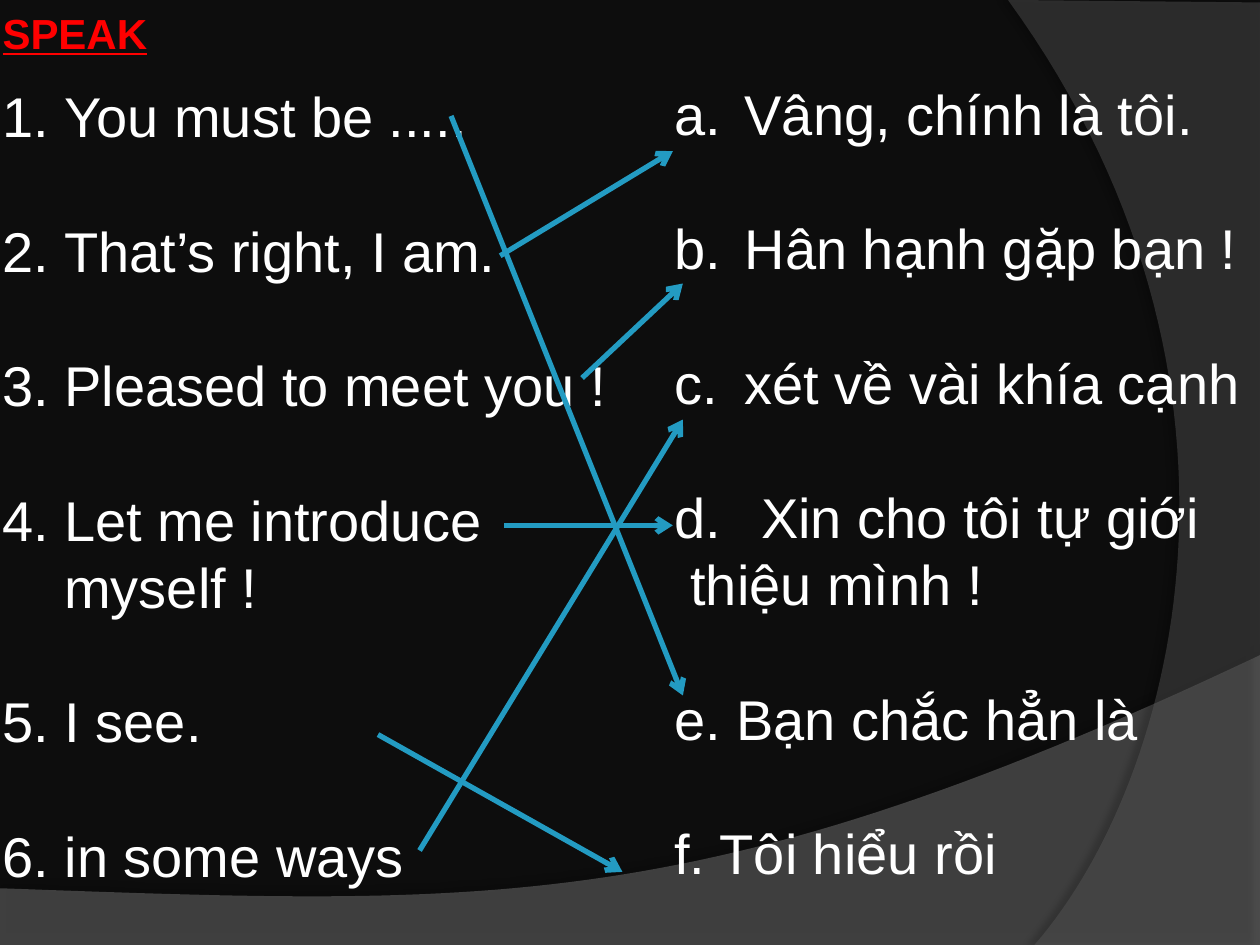
from lxml import etree
from pptx import Presentation
from pptx.dml.color import RGBColor
from pptx.enum.text import MSO_ANCHOR, MSO_AUTO_SIZE, PP_ALIGN
from pptx.enum.shapes import MSO_CONNECTOR
from pptx.oxml import parse_xml
from pptx.oxml.ns import nsdecls, qn
from pptx.util import Inches, Pt

TOP, NO_FIT = MSO_ANCHOR.TOP, MSO_AUTO_SIZE.NONE
LEFT, STRAIGHT = PP_ALIGN.LEFT, MSO_CONNECTOR.STRAIGHT

COLORS = {"back": "0D0D0D", "sweep": "7F7F7F", "arc": "5E5E5E",
          "heading": "FF0000", "text": "FFFFFF", "link": "239BC2"}
FONT = "Arial"
WIDTH, HEIGHT = Inches(10), Inches(7.5)
CELL = WIDTH / 10
LINE = 38.4

# Each line: left margin, hanging indent, numbering, gap after, text
ENGLISH = [
    (0.49, 0.49, "arabicPeriod", 1, "You must be ....."),
    (0.49, 0.49, "arabicPeriod", 1, "That’s right, I am."),
    (0.49, 0.49, "arabicPeriod", 1, "Pleased to meet you !"),
    (0.49, 0.49, "arabicPeriod", 0, "Let me introduce"),
    (0.49, 0, None, 1, "myself !"),
    (0, 0, None, 1, "5. I see."),
    (0, 0, None, 0, "6. in some ways"),
]
VIETNAMESE = [
    (0.56, 0.56, "alphaLcPeriod", 1, "Vâng, chính là tôi."),
    (0.56, 0.56, "alphaLcPeriod", 1, "Hân hạnh gặp bạn !"),
    (0.56, 0.56, "alphaLcPeriod", 1, "xét về vài khía cạnh"),
    (0.69, 0.69, "alphaLcPeriod", 0, "Xin cho tôi tự giới"),
    (0.13, 0, None, 1, "thiệu mình !"),
    (0, 0, None, 1, "e. Bạn chắc hẳn là"),
    (0, 0, None, 0, "f. Tôi hiểu rồi"),
]
LINKS = [((3.58, 0.92), (5.42, 5.52)), ((3.97, 2.03), (5.34, 1.2)),
         ((4.62, 3), (5.42, 2.25)), ((4, 4.17), (5.34, 4.17)),
         ((3, 5.83), (4.94, 6.92)), ((3.33, 6.75), (5.42, 3.33))]


def rgb(name):
    """Return the named colour."""
    return RGBColor.from_string(COLORS[name])


def cells(n):
    """Return a length of n grid cells."""
    return round(n * CELL)


def curve(p0, p1, p2, p3, steps=60):
    """Return points along a cubic curve."""
    return [tuple((1 - t) ** 3 * a + 3 * (1 - t) ** 2 * t * b
                  + 3 * (1 - t) * t * t * c + t ** 3 * d
                  for a, b, c, d in zip(p0, p1, p2, p3))
            for t in (i / steps for i in range(steps + 1))]


def add_band(s, depth, points, color, alpha, shadow):
    """Add a translucent band at the given depth behind the text."""
    start, *rest = [(cells(x), cells(y)) for x, y in points]
    builder = s.shapes.build_freeform(*start)
    builder.add_line_segments(rest, close=True)
    sp = builder.convert_to_shape()
    sp.fill.solid()
    sp.fill.fore_color.rgb = rgb(color)
    sp.line.fill.background()
    clr = sp.fill._xPr.find(".//" + qn("a:srgbClr"))
    etree.SubElement(clr, qn("a:alpha"), val=str(alpha * 1000))
    opacity, blur, dist, angle = shadow
    sp._element.spPr.append(parse_xml(
        f'<a:effectLst {nsdecls("a")}><a:outerShdw blurRad="{Pt(blur)}" '
        f'dist="{Pt(dist)}" dir="{angle * 60000}" algn="ctr" rotWithShape="0">'
        f'<a:srgbClr val="000000"><a:alpha val="{opacity * 1000}"/></a:srgbClr>'
        '</a:outerShdw></a:effectLst>'))
    s.shapes._spTree.insert(2 + depth, sp._element)


def add_backdrop(s):
    """Fill the background and add its two curved bands."""
    s.background.fill.solid()
    s.background.fill.fore_color.rgb = rgb("back")
    sweep = curve((10, 5.2), (5.59, 7.29), (3.91, 7.19), (0, 7.05))
    add_band(s, 0, [(0, 7.5), (10, 7.5)] + sweep, "sweep", 45, (35, 4, 3.5, 270))
    arc = curve((8.21, 7.5), (9.35, 6.19), (10.18, 3), (8, 0))
    add_band(s, 1, [(10, 0.02), (10, 7.5)] + arc, "arc", 40, (45, 4, 4, 180))


def fit_frame(sp, box):
    """Place a placeholder in its box and return its bare text frame."""
    sp.left, sp.top, sp.width, sp.height = map(cells, box)
    tf = sp.text_frame
    tf.margin_left = tf.margin_right = tf.margin_top = tf.margin_bottom = 0
    tf.word_wrap, tf.auto_size, tf.vertical_anchor = True, NO_FIT, TOP
    return tf


def add_run(p, text, size, color):
    """Add one run of text in the slide font."""
    r = p.add_run()
    r.text = text
    r.font.name, r.font.size = FONT, Pt(size)
    r.font.color.rgb = rgb(color)
    return r


def add_heading(sp, box, text):
    """Write the underlined heading."""
    p = fit_frame(sp, box).paragraphs[0]
    p.alignment = LEFT
    r = add_run(p, text, 24, "heading")
    r.font.bold = r.font.underline = True


def add_list(sp, box, lines):
    """Write one column of phrases."""
    tf = fit_frame(sp, box)
    for i, (margin, hang, numbering, gap, text) in enumerate(lines):
        p = tf.add_paragraph() if i else tf.paragraphs[0]
        p.alignment, p.line_spacing = LEFT, Pt(LINE)
        p.space_before, p.space_after = Pt(0), Pt(gap * LINE)
        pPr = p._p.get_or_add_pPr()
        pPr.set("marL", str(cells(margin)))
        pPr.set("indent", str(-cells(hang)))
        if numbering:
            etree.SubElement(pPr, qn("a:buFont"), typeface="+mj-lt")
            etree.SubElement(pPr, qn("a:buAutoNum"), type=numbering)
        else:
            etree.SubElement(pPr, qn("a:buNone"))
        add_run(p, text, 32, "text")


def add_links(s, links):
    """Join each phrase to its meaning with an arrow."""
    for start, end in links:
        line = s.shapes.add_connector(STRAIGHT, *map(cells, start + end))
        line.line.color.rgb = rgb("link")
        line.line.width = Pt(3)
        etree.SubElement(line.line._get_or_add_ln(), qn("a:tailEnd"), type="arrow")
        etree.SubElement(line._element.spPr, qn("a:effectLst"))


def main():
    """Build the matching exercise."""
    prs = Presentation()
    prs.slide_width, prs.slide_height = WIDTH, HEIGHT
    s = prs.slides.add_slide(prs.slide_layouts[3])
    heading, english, vietnamese = s.placeholders
    add_backdrop(s)
    add_heading(heading, (0.02, 0.06, 4.9, 0.4), "SPEAK")
    add_list(english, (0.02, 0.65, 4.9, 6.7), ENGLISH)
    add_list(vietnamese, (5.35, 0.63, 4.63, 6.7), VIETNAMESE)
    add_links(s, LINKS)
    prs.save("out.pptx")


if __name__ == "__main__":
    main()
